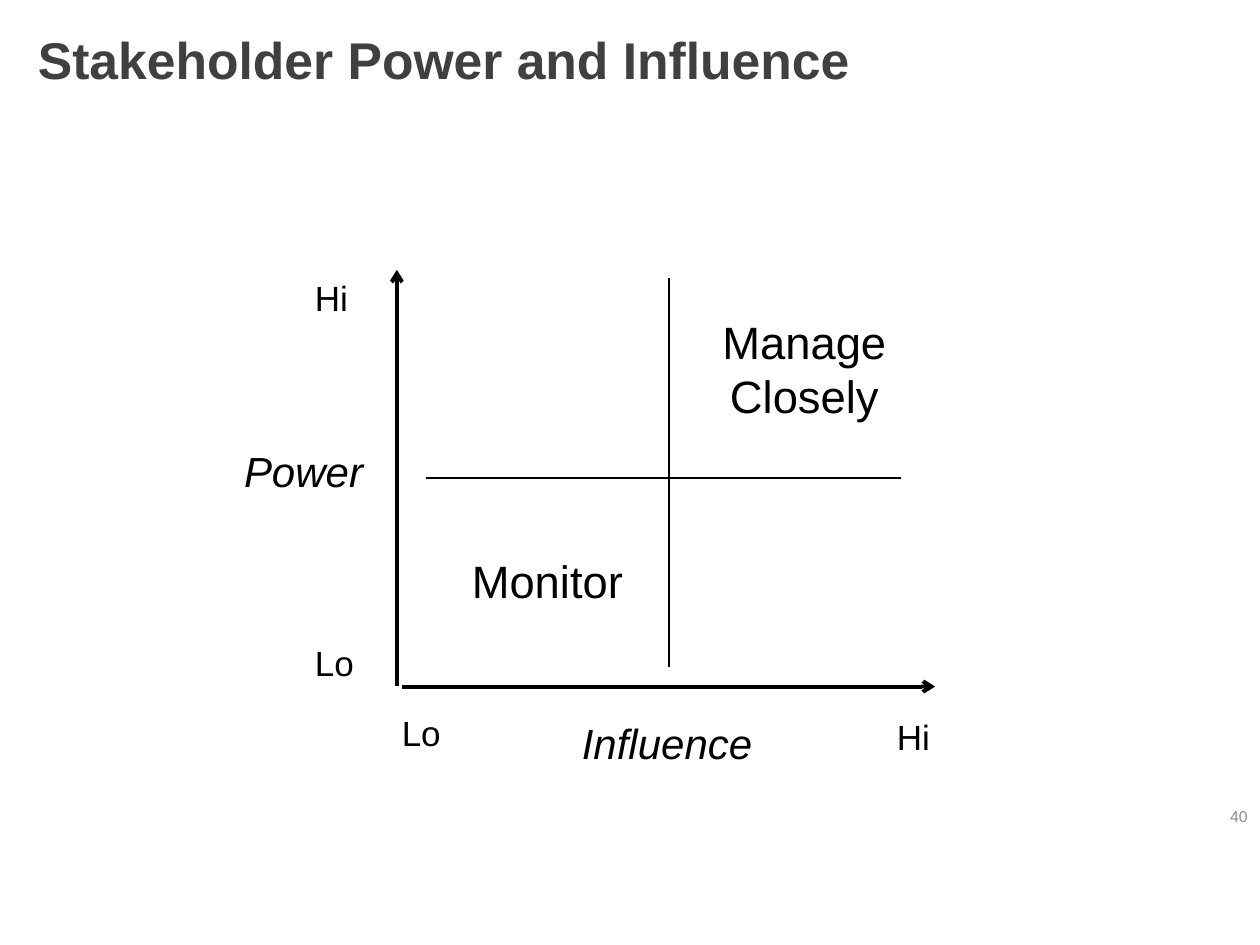
from lxml import etree
from pptx import Presentation
from pptx.dml.color import RGBColor
from pptx.enum.shapes import MSO_CONNECTOR
from pptx.enum.text import MSO_ANCHOR, MSO_AUTO_SIZE, PP_ALIGN
from pptx.oxml.ns import qn
from pptx.util import Cm, Pt

STRAIGHT = MSO_CONNECTOR.STRAIGHT
MIDDLE = MSO_ANCHOR.MIDDLE
FIT_SHAPE = MSO_AUTO_SIZE.SHAPE_TO_FIT_TEXT
NO_FIT = MSO_AUTO_SIZE.NONE
LEFT, CENTER, RIGHT = PP_ALIGN.LEFT, PP_ALIGN.CENTER, PP_ALIGN.RIGHT

BLACK = RGBColor(0x00, 0x00, 0x00)
DARK_GRAY = RGBColor(0x40, 0x40, 0x40)
PAGE_GRAY = RGBColor(0x8C, 0x8C, 0x8C)
FONT = "Arial"
TITLE_ONLY = 5

# Boxes are left, top, width, height in centimetres
TITLE_BOX = (0.51, 0.53, 21.59, 1.47)
NUMBER_BOX = (24.16, 16.10, 1.24, 0.69)
MATRIX_BOX = (4.67, 5.44, 14.35, 9.98)

# Matrix labels: text, left, top, width, height, within the matrix box
SCALE_ENDS = [
    ("Hi", 1.43, 0, 1.19, 1.12),
    ("Lo", 1.43, 7.36, 1.30, 1.12),
    ("Lo", 3.18, 8.78, 1.30, 1.12),
    ("Hi", 13.16, 8.86, 1.19, 1.12),
]
AXIS_NAMES = [
    ("Power", 0, 3.42, 2.95, 1.27),
    ("Influence", 6.81, 8.89, 3.99, 1.27),
]
QUADRANTS = [
    ("Manage Closely", 9.60, 0.76, 3.89, 2.46),
    ("Monitor", 4.50, 5.58, 3.73, 1.37),
]

# Matrix lines: start x, start y, end x, end y, within the matrix box
AXES = [(3.33, 8.38, 3.33, 0), (3.43, 8.40, 14.18, 8.40)]
DIVIDERS = [(8.82, 0.17, 8.82, 8.00), (3.92, 4.19, 13.49, 4.19)]


def style_paragraph(para, size, color, align=LEFT, bold=False, italic=False):
    para.alignment = align
    para.font.name = FONT
    para.font.size = Pt(size)
    para.font.color.rgb = color
    para.font.bold = bold
    para.font.italic = italic


def add_text(page, box, text, size, color=BLACK, wrap=False, **style):
    shape = page.shapes.add_textbox(*map(Cm, box))
    frame = shape.text_frame
    frame.word_wrap = wrap
    frame.auto_size = FIT_SHAPE
    frame.text = text
    style_paragraph(frame.paragraphs[0], size, color, **style)
    return frame


def add_line(page, ends, width, arrow=False):
    line = page.shapes.add_connector(STRAIGHT, *map(Cm, ends))
    line.line.color.rgb = BLACK
    line.line.width = Pt(width)
    if arrow:
        outline = line.line._get_or_add_ln()
        etree.SubElement(outline, qn("a:tailEnd"), type="arrow")
    etree.SubElement(line._element.spPr, qn("a:effectLst"))


def add_title(page, box):
    title = page.shapes.title
    title.left, title.top, title.width, title.height = map(Cm, box)
    frame = title.text_frame
    frame.text = "Stakeholder Power and Influence"
    frame.auto_size = NO_FIT
    frame.vertical_anchor = MIDDLE
    para = frame.paragraphs[0]
    para.line_spacing = 0.9
    style_paragraph(para, 29.5, DARK_GRAY, bold=True)


def add_page_number(page, box):
    frame = add_text(page, box, "40", 9, PAGE_GRAY, wrap=True, align=RIGHT)
    frame.auto_size = NO_FIT
    frame.vertical_anchor = MIDDLE


def add_matrix(page, box):
    left, top = box[:2]

    def place(x, y, width, height):
        return left + x, top + y, width, height

    # Axes and quadrant dividers
    for lines, width, arrow in ((AXES, 2.25, True), (DIVIDERS, 1, False)):
        for x1, y1, x2, y2 in lines:
            ends = (left + x1, top + y1, left + x2, top + y2)
            add_line(page, ends, width, arrow)

    # Labels
    for text, *area in SCALE_ENDS:
        add_text(page, place(*area), text, 20)
    for text, *area in AXIS_NAMES:
        add_text(page, place(*area), text, 24, italic=True)
    for text, *area in QUADRANTS:
        add_text(page, place(*area), text, 25.9, wrap=True, align=CENTER)


def main():
    deck = Presentation()
    deck.slide_width, deck.slide_height = Cm(25.4), Cm(19.05)
    page = deck.slides.add_slide(deck.slide_layouts[TITLE_ONLY])
    add_title(page, TITLE_BOX)
    add_page_number(page, NUMBER_BOX)
    add_matrix(page, MATRIX_BOX)
    deck.save("out.pptx")


if __name__ == "__main__":
    main()
